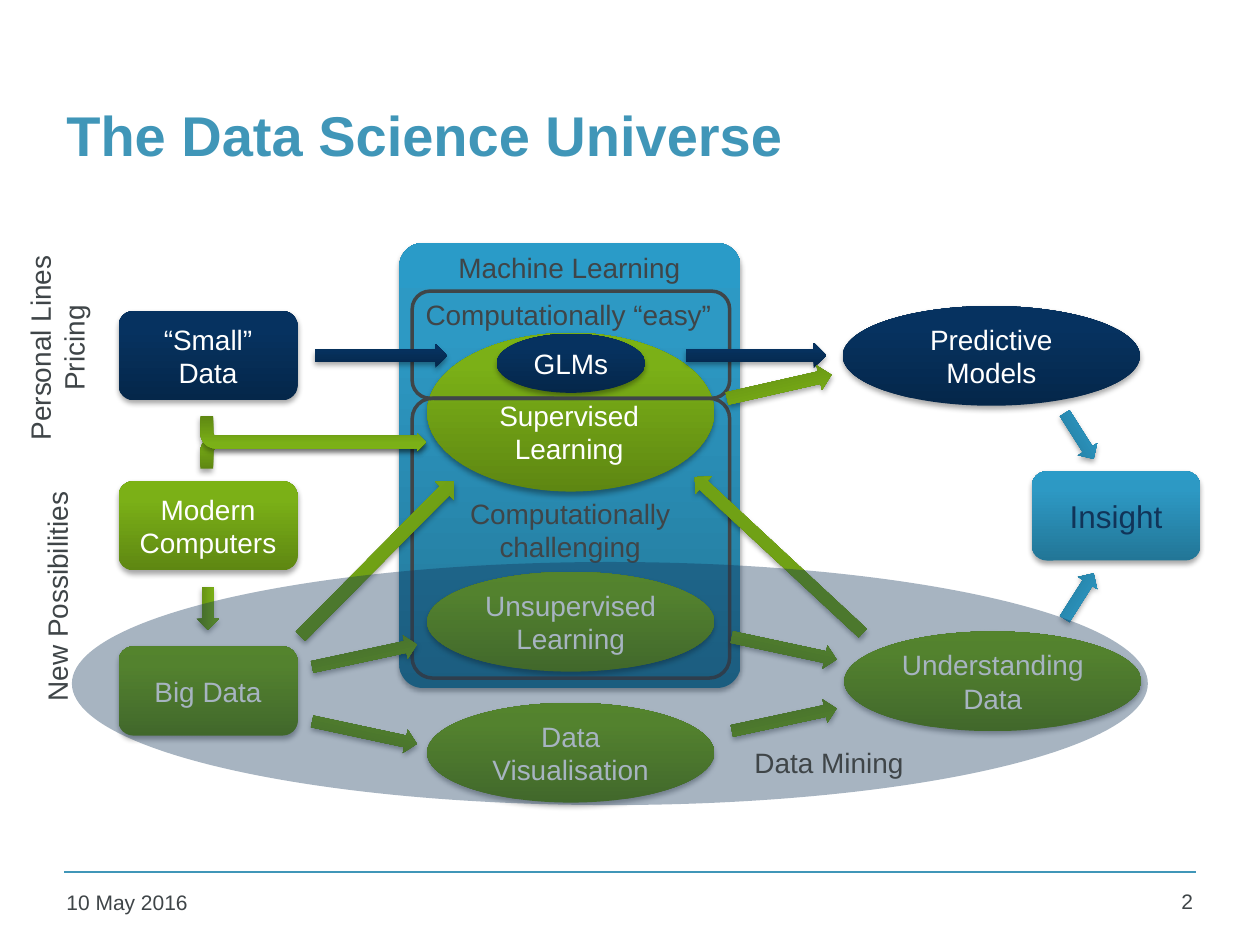
from copy import deepcopy

from pptx import Presentation
from pptx import util as u
from pptx.dml.color import RGBColor
from pptx.enum import shapes, text
from pptx.oxml import ns
from lxml import etree

HUES = {
    "title": "4096B8",
    "grey": "3F4548",
    "white": "FFFFFF",
    "deep": "113458",
    "black": "000000",
}
# Gradient stops from the bottom of a shape to its top
FADES = {
    "blue": ("227697", "2D99C4", "2A9BC8"),
    "green": ("5E8712", "7BB017", "7CB314"),
    "navy": ("05274A", "063260", "043262"),
}
STOPS = (0, 0.8, 1)

KIND = shapes.MSO_SHAPE
ROUND, OVAL = KIND.ROUNDED_RECTANGLE, KIND.OVAL
ARROW, BENT = KIND.RIGHT_ARROW, KIND.BENT_ARROW
ALIGN = {
    "left": text.PP_ALIGN.LEFT,
    "mid": text.PP_ALIGN.CENTER,
    "right": text.PP_ALIGN.RIGHT,
}


def rgb(name):
    return RGBColor.from_string(HUES[name])


def cms(box):
    return [u.Cm(n) for n in box]


def write(frame, words, size=16, hue="grey", bold=False, align="left",
          middle=False, wrap=True):
    """Fill a text frame, one paragraph for each line of words."""
    frame.word_wrap = wrap
    frame.vertical_anchor = (
        text.MSO_ANCHOR.MIDDLE if middle else text.MSO_ANCHOR.TOP)
    for i, line in enumerate(words.split("\n")):
        para = frame.add_paragraph() if i else frame.paragraphs[0]
        para.alignment = ALIGN[align]
        run = para.add_run()
        run.text = line
        font = run.font
        font.name, font.size, font.bold = "Arial", u.Pt(size), bold
        font.color.rgb = rgb(hue)


def label(slide, box, words, turn=0, **form):
    item = slide.shapes.add_textbox(*cms(box))
    item.rotation = turn
    write(item.text_frame, words, **form)


def alpha(node, share):
    """Make the colour inside a fill or effect partly opaque."""
    tint = node.find(".//" + ns.qn("a:srgbClr"))
    etree.SubElement(tint, ns.qn("a:alpha"), val=str(share * 1000))


def shade(item):
    """Give a shape a soft shadow straight below it."""
    item.shadow.inherit = False
    glow = item._element.spPr.find(ns.qn("a:effectLst"))
    drop = etree.SubElement(
        glow, ns.qn("a:outerShdw"), blurRad="40000", dist="23000",
        dir="5400000", rotWithShape="0")
    etree.SubElement(drop, ns.qn("a:srgbClr"), val=HUES["black"])
    alpha(drop, 35)


def fade(item, name):
    """Fill a shape with a three-stop vertical gradient."""
    fill = item.fill
    fill.gradient()
    fill.gradient_angle = 90
    stops = item._element.spPr.find(".//" + ns.qn("a:gsLst"))
    stops.append(deepcopy(stops[0]))
    for stop, place, hue in zip(fill.gradient_stops, STOPS, FADES[name]):
        stop.color.rgb = RGBColor.from_string(hue)
        stop.position = place


def solid(slide, kind, box, tone, words="", adj=(), turn=0, flip="", **form):
    item = slide.shapes.add_shape(kind, *cms(box))
    for i, value in enumerate(adj):
        item.adjustments[i] = value
    item.rotation = turn
    if flip:
        item._element.spPr.xfrm.set(flip, "1")
    fade(item, tone)
    item.line.fill.background()
    shade(item)
    if words:
        form = {"hue": "white", **form}
        write(item.text_frame, words, align="mid", middle=True, **form)


def frame(slide, box, adj):
    """Draw an empty rounded outline."""
    item = slide.shapes.add_shape(ROUND, *cms(box))
    item.adjustments[0] = adj
    item.fill.background()
    item.line.color.rgb = rgb("grey")
    item.line.width = u.Pt(2)
    item.shadow.inherit = False


def rule(slide, x, y, end):
    line = slide.shapes.add_connector(
        shapes.MSO_CONNECTOR.STRAIGHT, *cms((x, y, end, y)))
    line.line.color.rgb = rgb("title")
    line.line.width = u.Pt(1)
    etree.SubElement(line._element.spPr, ns.qn("a:effectLst"))


def veil(slide, box):
    """Lay a see-through oval over the lower part."""
    item = slide.shapes.add_shape(OVAL, *cms(box))
    item.fill.solid()
    item.fill.fore_color.rgb = rgb("deep")
    alpha(item._element.spPr.find(ns.qn("a:solidFill")), 37)
    item.line.fill.background()
    item.shadow.inherit = False


def main():
    deck = Presentation()
    deck.slide_width, deck.slide_height = u.Cm(25.4), u.Cm(19.05)
    slide = deck.slides.add_slide(deck.slide_layouts[6])

    # Title and footer
    rule(slide, 1.3, 17.58, 24.1)
    label(slide, (1.09, 1.12, 23.04, 3.18), "The Data Science Universe",
          size=32, hue="title", bold=True, middle=True)
    label(slide, (1.09, 17.81, 5.59, 0.91), "10 May 2016", size=12)
    label(slide, (22.5, 17.78, 1.8, 0.94), "2", size=12, align="right")

    # Machine learning panel
    solid(slide, ROUND, (8.05, 4.9, 6.88, 8.97), "blue", adj=[0.069])
    label(slide, (8.99, 4.93, 5.03, 0.94), "Machine Learning", wrap=False)
    solid(slide, OVAL, (8.61, 6.71, 5.79, 3.2), "green")
    label(slide, (9.8, 7.9, 3.35, 1.63), "Supervised\nLearning",
          hue="white", align="mid", wrap=False)
    solid(slide, OVAL, (10.01, 6.73, 3, 1.19), "navy", "GLMs")

    # Inputs and insight
    solid(slide, ROUND, (20.8, 9.5, 3.4, 1.8), "blue", "Insight",
          size=18, hue="deep")
    for y, tone, words in ((9.7, "green", "Modern Computers"),
                           (6.27, "navy", "“Small” Data"),
                           (13.03, "green", "Big Data")):
        solid(slide, ROUND, (2.39, y, 3.61, 1.8), tone, words)

    # Methods and results
    for x, y, wide, tone, words in (
            (8.61, 11.53, 5.79, "green", "Unsupervised\nLearning"),
            (8.61, 14.17, 5.79, "green", "Data\nVisualisation"),
            (17.02, 12.73, 5.99, "green", "Understanding\nData"),
            (16.99, 6.17, 5.99, "navy", "Predictive\nModels")):
        solid(slide, OVAL, (x, y, wide, 2.01), tone, words)

    # Side labels
    label(slide, (-1.07, 6.2, 4.45, 1.63), "Personal Lines\nPricing",
          turn=270, align="mid", wrap=False)
    label(slide, (-1.24, 11.53, 4.78, 0.94), "New Possibilities",
          turn=270, wrap=False)

    # Easy and challenging zones
    label(slide, (8.33, 5.87, 6.32, 0.94), "Computationally “easy”",
          wrap=False)
    frame(slide, (8.31, 5.87, 6.4, 2.16), 0.167)
    frame(slide, (8.31, 8.03, 6.4, 5.64), 0.073)
    label(slide, (9.12, 9.88, 4.75, 1.63), "Computationally\nchallenging",
          align="mid", wrap=False)

    # Arrows
    for box, tone, turn, flip in (
            ((13.82, 6.91, 2.84, 0.51), "navy", 0, ""),
            ((21.21, 8.56, 1.09, 0.46), "blue", 57.6, ""),
            ((21.21, 11.79, 1.09, 0.46), "blue", 302.4, "flipV"),
            ((3.76, 12.04, 0.86, 0.46), "green", 90, ""),
            ((5.41, 11, 4.39, 0.53), "green", 314.7, ""),
            ((6.27, 14.53, 2.16, 0.48), "green", 12.1, ""),
            ((13.39, 10.95, 4.62, 0.48), "green", 42.9, "flipH"),
            ((14.63, 7.54, 2.16, 0.51), "green", 347.2, "flipV"),
            ((6.27, 12.98, 2.16, 0.48), "green", 347.9, "flipV"),
            ((14.73, 12.83, 2.16, 0.48), "green", 12.1, ""),
            ((14.73, 14.27, 2.16, 0.48), "green", 347.9, "flipV"),
            ((6.35, 6.93, 2.67, 0.48), "navy", 0, "")):
        solid(slide, ARROW, box, tone, turn=turn, flip=flip)
    for y, flip in ((8.74, ""), (8.38, "flipV")):
        solid(slide, BENT, (4.04, y, 4.55, 0.71), "green", flip=flip,
              adj=(0.364, 0.25, 0.25, 0.438))

    # Data mining overlay
    veil(slide, (1.45, 11.33, 21.69, 4.9))
    label(slide, (14.96, 14.91, 4.47, 0.86), "Data Mining")

    deck.save("out.pptx")


if __name__ == "__main__":
    main()
